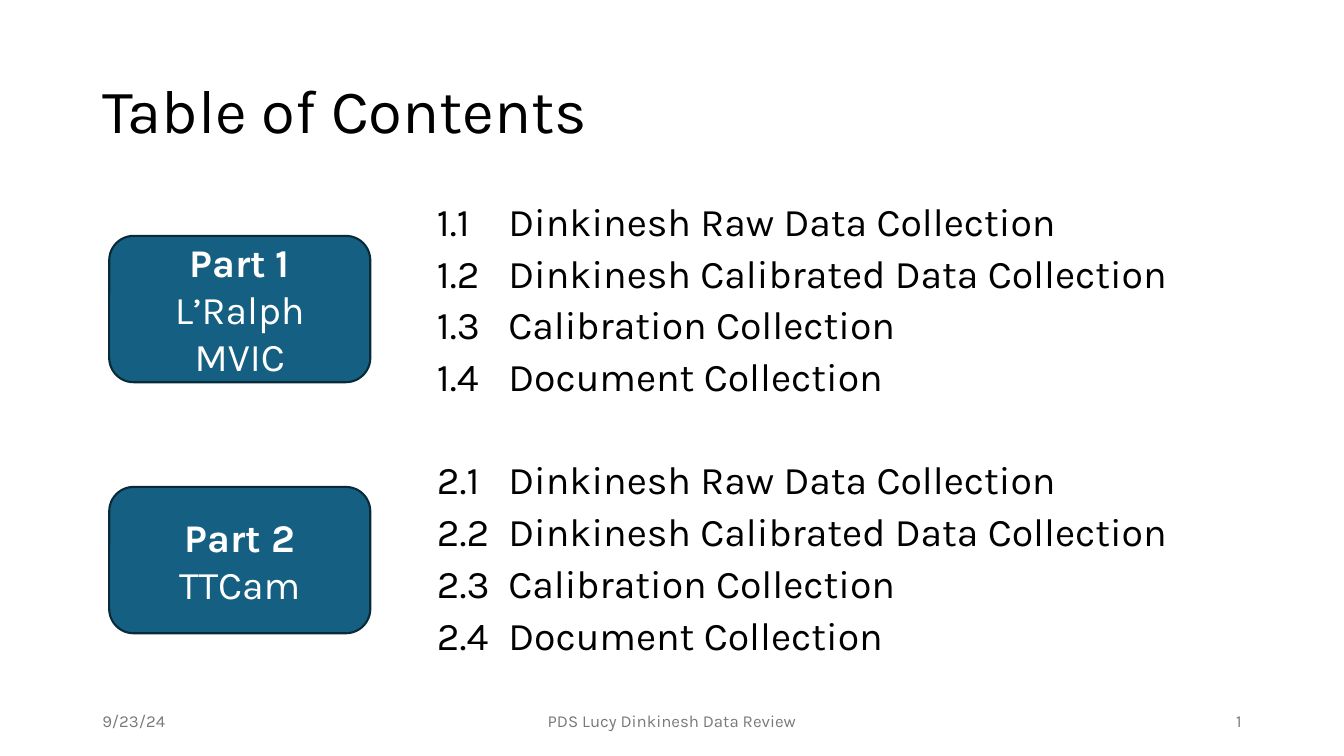
from lxml.etree import SubElement
from pptx import Presentation
from pptx.dml.color import RGBColor
from pptx.enum.shapes import MSO_SHAPE
from pptx.enum.text import MSO_ANCHOR, MSO_AUTO_SIZE, PP_ALIGN
from pptx.oxml.ns import qn
from pptx.util import Pt

ITEM_SIZE = 28
ITEM_SPACE = 10
GROUP_SPACE = 46.9
COLLECTIONS = [
    "Dinkinesh Raw Data Collection",
    "Dinkinesh Calibrated Data Collection",
    "Calibration Collection",
    "Document Collection",
]
PARTS = ["L’Ralph MVIC", "TTCam"]


def color(hex_string):
    return RGBColor.from_string(hex_string)


def write(paragraph, text, size=ITEM_SIZE, fill="000000", bold=False,
          align=PP_ALIGN.LEFT, line_spacing=None, before=0, tab=None):
    """Add formatted text to a paragraph."""
    paragraph.alignment = align
    paragraph.space_before = Pt(before)
    if line_spacing:
        paragraph.line_spacing = line_spacing
    if tab:
        tab_list = SubElement(paragraph._p.get_or_add_pPr(), qn("a:tabLst"))
        SubElement(tab_list, qn("a:tab"), pos=str(Pt(tab)), algn="l")
    run = paragraph.add_run()
    run.text = text
    run.font.name = "Karla"
    run.font.size = Pt(size)
    run.font.bold = bold
    run.font.color.rgb = color(fill)


class ContentsSlide:
    box_fill = "156082"
    box_line = "092A39"
    footer_color = "797979"

    def __init__(self, presentation):
        self.slide = presentation.slides.add_slide(presentation.slide_layouts[5])

    def frame(self, shape, anchor):
        text_frame = shape.text_frame
        text_frame.word_wrap = True
        text_frame.auto_size = MSO_AUTO_SIZE.NONE
        text_frame.vertical_anchor = anchor
        return text_frame

    def text_box(self, left, top, width, height, anchor=MSO_ANCHOR.TOP):
        shape = self.slide.shapes.add_textbox(Pt(left), Pt(top), Pt(width), Pt(height))
        return self.frame(shape, anchor)

    def title(self, text):
        shape = self.slide.shapes.title
        shape.left, shape.top, shape.width, shape.height = Pt(66), Pt(29), Pt(828), Pt(104)
        text_frame = self.frame(shape, MSO_ANCHOR.MIDDLE)
        write(text_frame.paragraphs[0], text, size=44, line_spacing=0.9)

    def part_box(self, top, heading, instrument):
        shape = self.slide.shapes.add_shape(
            MSO_SHAPE.ROUNDED_RECTANGLE, Pt(78), Pt(top), Pt(186.5), Pt(104.5))
        shape.shadow.inherit = False
        shape.fill.solid()
        shape.fill.fore_color.rgb = color(self.box_fill)
        shape.line.color.rgb = color(self.box_line)
        shape.line.width = Pt(1.5)
        text_frame = self.frame(shape, MSO_ANCHOR.MIDDLE)
        write(text_frame.paragraphs[0], heading, fill="FFFFFF", bold=True,
              align=PP_ALIGN.CENTER)
        write(text_frame.add_paragraph(), instrument, fill="FFFFFF",
              align=PP_ALIGN.CENTER)

    def contents(self):
        text_frame = self.text_box(305, 144, 589, 343)
        paragraph = text_frame.paragraphs[0]
        for part in range(1, len(PARTS) + 1):
            for number, name in enumerate(COLLECTIONS, 1):
                first_in_part = number == 1
                if part > 1 or not first_in_part:
                    paragraph = text_frame.add_paragraph()
                before = GROUP_SPACE if part > 1 and first_in_part else ITEM_SPACE
                write(paragraph, f"{part}.{number}\t{name}", line_spacing=0.8,
                      before=before, tab=51)

    def footer(self, left, width, text, align):
        text_frame = self.text_box(left, 500.5, width, 29, MSO_ANCHOR.MIDDLE)
        write(text_frame.paragraphs[0], text, size=12, fill=self.footer_color, align=align)


def main():
    presentation = Presentation()
    presentation.slide_width, presentation.slide_height = Pt(960), Pt(540)
    page = ContentsSlide(presentation)

    # Title and list of collections
    page.title("Table of Contents")
    page.contents()

    # Footer
    page.footer(66, 216, "9/23/24", PP_ALIGN.LEFT)
    page.footer(318, 324, "PDS Lucy Dinkinesh Data Review", PP_ALIGN.CENTER)
    page.footer(678, 216, "1", PP_ALIGN.RIGHT)

    # Part boxes
    for index, instrument in enumerate(PARTS):
        page.part_box(168.5 + index * 179.3, f"Part {index + 1}", instrument)

    presentation.save("out.pptx")


if __name__ == "__main__":
    main()
